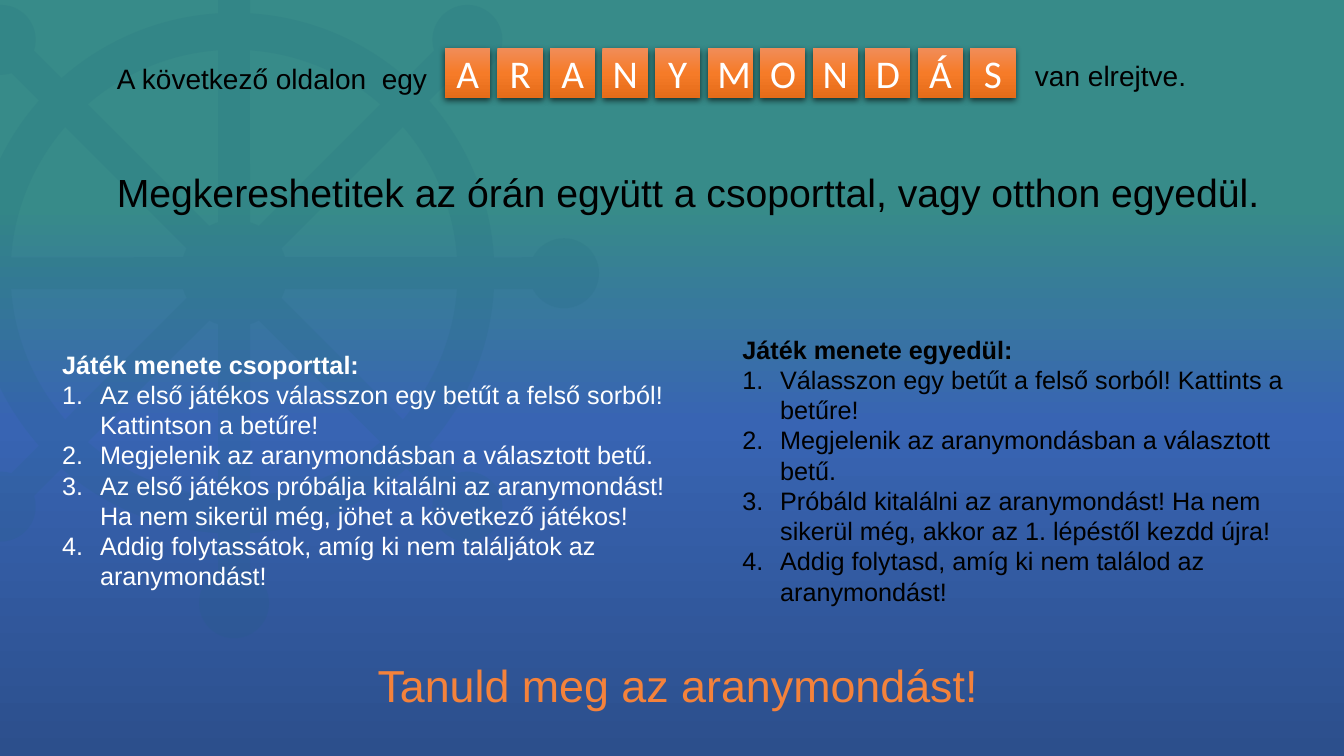
import math
from dataclasses import dataclass

import lxml.etree
import pptx
import pptx.dml.color
import pptx.dml.fill
import pptx.enum.shapes
import pptx.enum.text
import pptx.oxml.ns
import pptx.shapes.autoshape
import pptx.slide
import pptx.text.text
import pptx.util

Pt = pptx.util.Pt
RGBColor = pptx.dml.color.RGBColor
qn = pptx.oxml.ns.qn
Point = tuple[float, float]
Stops = tuple[tuple[int, str], ...]


@dataclass(frozen=True)
class Theme:
    background: Stops = ((27, "378B89"), (56, "3864B3"), (100, "2C4F8C"))
    tile: Stops = ((0, "F18C57"), (50, "F67B28"), (100, "E56C19"))
    wheel: str = "1F657B"
    wheel_opacity: int = 13
    shadow: str = "000000"
    shadow_opacity: int = 63
    dark: str = "000000"
    light: str = "FFFFFF"
    accent: str = "F4823B"
    text_font: str = "Arial"
    tile_font: str = "Calibri"
    rules_size: int = 18
    intro_size: int = 20
    headline_size: int = 28
    closing_size: int = 32


THEME = Theme()


@dataclass(frozen=True)
class Box:
    left: float
    top: float
    width: float
    height: float

    def lengths(self) -> tuple[pptx.util.Length, ...]:
        return Pt(self.left), Pt(self.top), Pt(self.width), Pt(self.height)


@dataclass(frozen=True)
class Label:
    box: Box
    text: str
    size: int
    color: str


@dataclass(frozen=True)
class Rules:
    box: Box
    title: str
    steps: tuple[str, ...]
    color: str


@dataclass(frozen=True)
class Arc:
    center: Point
    radius: float
    start: float
    end: float

    def point(self, angle: float) -> tuple[pptx.util.Length, ...]:
        return (Pt(self.center[0] + self.radius * math.cos(angle)),
                Pt(self.center[1] + self.radius * math.sin(angle)))


@dataclass(frozen=True)
class Wheel:
    center: Point = (167.2, 195.2)
    spokes: int = 8
    half_spoke: float = 11.4
    hub: float = 38.2
    rim_inner: float = 159.6
    rim_outer: float = 186
    knob_distance: float = 235.7
    knob: float = 25


WORD = "ARANYMONDÁS"
FIRST_TILE = Box(317.8, 34.6, 32.4, 35.3)
TILE_PITCH = 37.52

LABELS = (
    Label(Box(76.5, 40.3, 237.6, 31.7), "A következő oldalon  egy", THEME.intro_size, THEME.dark),
    Label(Box(732.2, 38.2, 123.1, 31.7), "van elrejtve.", THEME.intro_size, THEME.dark),
    Label(Box(76.3, 116.6, 841, 41), "Megkereshetitek az órán együtt a csoporttal, vagy otthon egyedül.",
          THEME.headline_size, THEME.dark),
    Label(Box(262.6, 466.2, 446.4, 46.1), "Tanuld meg az aranymondást!", THEME.closing_size, THEME.accent),
)

RULES = (
    Rules(Box(37.4, 245.8, 463, 203.8), "Játék menete csoporttal:", (
        "Az első játékos válasszon egy betűt a felső sorból! Kattintson a betűre!",
        "Megjelenik az aranymondásban a választott betű.",
        "Az első játékos próbálja kitalálni az aranymondást! Ha nem sikerül még, jöhet a következő játékos!",
        "Addig folytassátok, amíg ki nem találjátok az aranymondást!",
    ), THEME.light),
    Rules(Box(523.2, 235, 428.4, 225.4), "Játék menete egyedül:", (
        "Válasszon egy betűt a felső sorból! Kattints a betűre!",
        "Megjelenik az aranymondásban a választott betű.",
        "Próbáld kitalálni az aranymondást! Ha nem sikerül még, akkor az 1. lépéstől kezdd újra!",
        "Addig folytasd, amíg ki nem találod az aranymondást!",
    ), THEME.dark),
)


def add_child(parent: lxml.etree._Element, tag: str, **attributes: object) -> lxml.etree._Element:
    values = {name: str(value) for name, value in attributes.items()}
    return lxml.etree.SubElement(parent, qn(tag), values)


def set_gradient(fill: pptx.dml.fill.FillFormat, owner: lxml.etree._Element, stops: Stops) -> None:
    """Fill from top to bottom with the given stops."""
    fill.gradient()
    fill.gradient_angle = 270
    stop_list = owner.find(".//" + qn("a:gsLst"))
    for stop in list(stop_list):
        stop_list.remove(stop)
    for percent, color in stops:
        add_child(add_child(stop_list, "a:gs", pos=percent * 1000), "a:srgbClr", val=color)


def add_run(paragraph: pptx.text.text._Paragraph, text: str, size: int, color: str,
            font: str = THEME.text_font, bold: bool = False) -> None:
    run = paragraph.add_run()
    run.text = text
    run.font.size = Pt(size)
    run.font.name = font
    run.font.bold = bold
    run.font.color.rgb = RGBColor.from_string(color)


def wheel_contours(wheel: Wheel) -> list[list[Arc]]:
    """The outer outline, then one window between each pair of spokes."""
    turn = 2 * math.pi / wheel.spokes
    hub_gap, inner_gap, outer_gap, knob_gap = (
        math.asin(wheel.half_spoke / radius)
        for radius in (wheel.hub, wheel.rim_inner, wheel.rim_outer, wheel.knob))
    outline: list[Arc] = []
    windows: list[list[Arc]] = []
    for index in range(wheel.spokes):
        angle, following = index * turn, (index + 1) * turn
        knob_center = (wheel.center[0] + wheel.knob_distance * math.cos(angle),
                       wheel.center[1] + wheel.knob_distance * math.sin(angle))
        outline += [Arc(knob_center, wheel.knob, angle - math.pi + knob_gap, angle),
                    Arc(knob_center, wheel.knob, angle, angle + math.pi - knob_gap),
                    Arc(wheel.center, wheel.rim_outer, angle + outer_gap, following - outer_gap)]
        windows.append([Arc(wheel.center, wheel.rim_inner, following - inner_gap, angle + inner_gap),
                        Arc(wheel.center, wheel.hub, angle + hub_gap, following - hub_gap)])
    return [outline, *windows]


def draw_wheel(slide: pptx.slide.Slide, wheel: Wheel) -> None:
    contours = wheel_contours(wheel)
    first_arc = contours[0][0]
    builder = slide.shapes.build_freeform(*first_arc.point(first_arc.start))
    for contour in contours:
        if contour is not contours[0]:
            builder.move_to(*contour[0].point(contour[0].start))
        builder.add_line_segments([arc.point(angle) for arc in contour for angle in (arc.start, arc.end)])
    shape = builder.convert_to_shape()

    # Every second line runs between the ends of an arc: bend it
    chords = list(shape._element.iter(qn("a:lnTo")))[1::2]
    for chord, arc in zip(chords, (arc for contour in contours for arc in contour)):
        chord.addprevious(lxml.etree.Element(qn("a:arcTo"), {
            "wR": str(Pt(arc.radius)), "hR": str(Pt(arc.radius)),
            "stAng": str(round(math.degrees(arc.start) % 360 * 60000)),
            "swAng": str(round(math.degrees(arc.end - arc.start) * 60000))}))
        chord.getparent().remove(chord)

    shape.shadow.inherit = False
    shape.line.fill.background()
    shape.fill.solid()
    shape.fill.fore_color.rgb = RGBColor.from_string(THEME.wheel)
    color = shape._element.spPr.find(qn("a:solidFill")).find(qn("a:srgbClr"))
    add_child(color, "a:alpha", val=THEME.wheel_opacity * 1000)


def add_shadow(shape: pptx.shapes.autoshape.Shape) -> None:
    shape.shadow.inherit = False
    effects = shape._element.spPr.find(qn("a:effectLst"))
    shadow = add_child(effects, "a:outerShdw", blurRad=Pt(4.5), dist=Pt(1.5), dir=5400000, rotWithShape=0)
    color = add_child(shadow, "a:srgbClr", val=THEME.shadow)
    add_child(color, "a:alpha", val=THEME.shadow_opacity * 1000)


def draw_tiles(slide: pptx.slide.Slide) -> None:
    group = slide.shapes.add_group_shape()
    for index, letter in enumerate(WORD):
        box = Box(FIRST_TILE.left + index * TILE_PITCH, FIRST_TILE.top, FIRST_TILE.width, FIRST_TILE.height)
        shape = group.shapes.add_shape(pptx.enum.shapes.MSO_SHAPE.RECTANGLE, *box.lengths())
        set_gradient(shape.fill, shape._element.spPr, THEME.tile)
        shape.line.fill.background()
        add_shadow(shape)
        shape.text_frame.vertical_anchor = pptx.enum.text.MSO_ANCHOR.MIDDLE
        paragraph = shape.text_frame.paragraphs[0]
        paragraph.alignment = pptx.enum.text.PP_ALIGN.CENTER
        add_run(paragraph, letter, THEME.headline_size, THEME.light, THEME.tile_font)


def add_text_frame(slide: pptx.slide.Slide, box: Box, wrap: bool) -> pptx.text.text.TextFrame:
    frame = slide.shapes.add_textbox(*box.lengths()).text_frame
    frame.word_wrap = wrap
    frame.auto_size = pptx.enum.text.MSO_AUTO_SIZE.SHAPE_TO_FIT_TEXT
    return frame


def draw_label(slide: pptx.slide.Slide, label: Label) -> None:
    frame = add_text_frame(slide, label.box, wrap=False)
    add_run(frame.paragraphs[0], label.text, label.size, label.color)


def draw_rules(slide: pptx.slide.Slide, rules: Rules) -> None:
    frame = add_text_frame(slide, rules.box, wrap=True)
    add_run(frame.paragraphs[0], rules.title, THEME.rules_size, rules.color, bold=True)
    for step in rules.steps:
        paragraph = frame.add_paragraph()
        properties = paragraph._p.get_or_add_pPr()
        properties.set("marL", str(Pt(27)))
        properties.set("indent", str(Pt(-27)))
        add_child(properties, "a:buAutoNum", type="arabicPeriod")
        add_run(paragraph, step, THEME.rules_size, rules.color)


def main() -> None:
    presentation = pptx.Presentation()
    presentation.slide_width, presentation.slide_height = Pt(960), Pt(540)
    slide = presentation.slides.add_slide(presentation.slide_layouts[6])
    # Background and ship's wheel
    set_gradient(slide.background.fill, slide._element, THEME.background)
    draw_wheel(slide, Wheel())
    # Letter tiles, single lines and the two sets of rules
    draw_tiles(slide)
    for label in LABELS:
        draw_label(slide, label)
    for rules in RULES:
        draw_rules(slide, rules)
    presentation.save("out.pptx")


if __name__ == "__main__":
    main()
